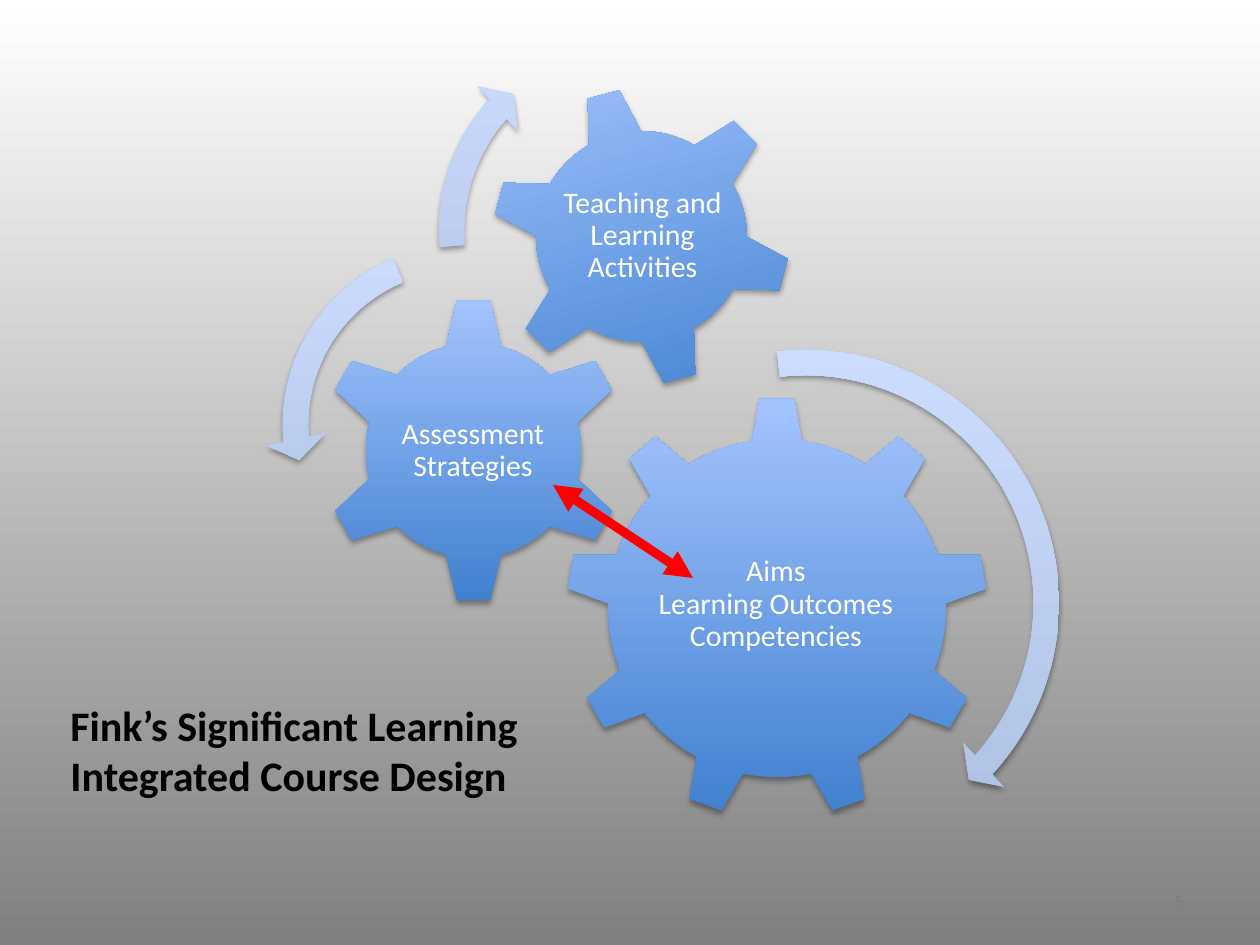
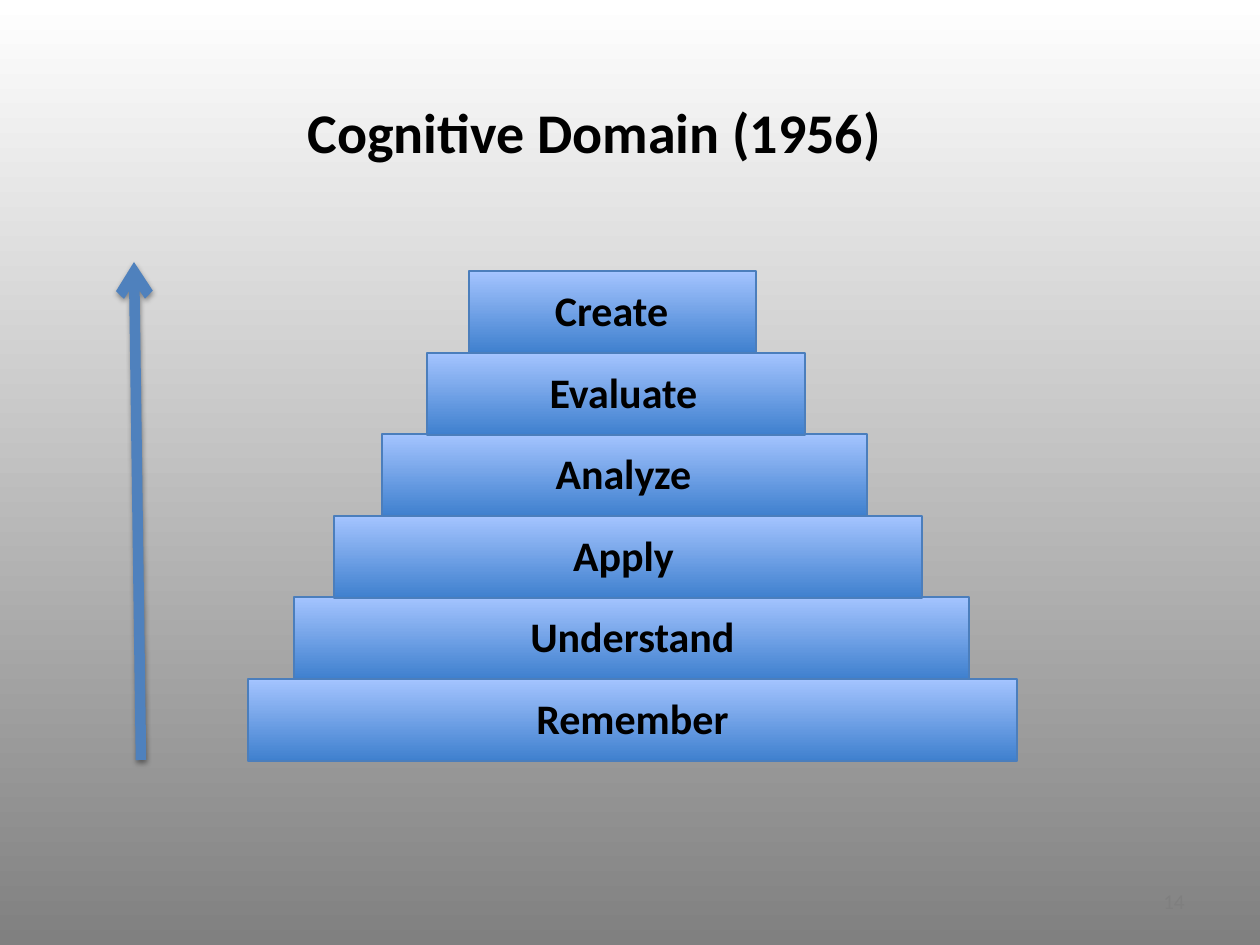
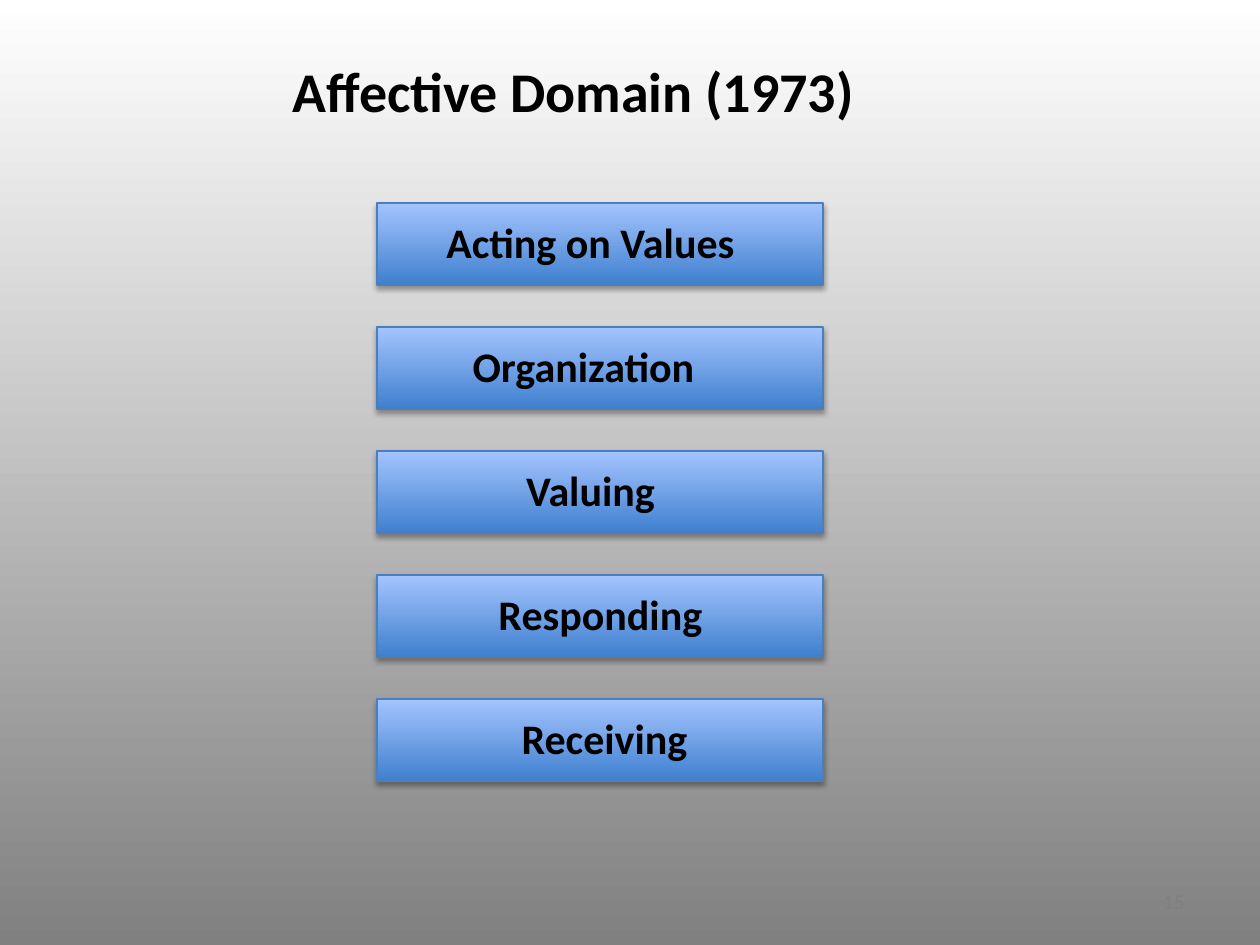
import dataclasses

import pptx
import pptx.dml.color
import pptx.enum.shapes
import pptx.enum.text
import pptx.oxml
import pptx.oxml.ns
import pptx.util
from lxml import etree

SHAPE = pptx.enum.shapes.MSO_SHAPE
ALIGN = pptx.enum.text.PP_ALIGN
ANCHOR = pptx.enum.text.MSO_ANCHOR


@dataclasses.dataclass(frozen=True)
class Theme:
    """Colours, font and type sizes of the deck."""
    font: str = "Calibri"
    black: str = "000000"
    white: str = "FFFFFF"
    red: str = "FF0000"
    blue: str = "4F81BD"
    edge: str = "4B7EBC"
    muted: str = "7F7F7F"
    back: tuple = ("808080", "FFFFFF")
    block: tuple = ("3F80CE", "A4C4FF")
    arc: tuple = ("ADBFE1", "CCDDFF")
    title: int = 32
    label: int = 24
    gear: int = 17
    number: int = 12


THEME = Theme()


def px(count):
    """Turn pixels into EMU."""
    return pptx.util.Emu(round(count * 914400 / 126))


def rgb(code):
    """Turn a hex code into a colour."""
    return pptx.dml.color.RGBColor.from_string(code)


def blend(fill, pair):
    """Fill with a gradient that runs from bottom to top."""
    fill.gradient()
    fill.gradient_angle = 90
    for stop, place, code in zip(fill.gradient_stops, (0, 1), pair):
        stop.position = place
        stop.color.rgb = rgb(code)


def shade(shape, alpha=0):
    """Give a shape a soft shadow below, or none when alpha is zero."""
    props = shape._element.spPr
    tag = pptx.oxml.ns.qn("a:effectLst")
    for old in props.findall(tag):
        props.remove(old)
    effect = etree.SubElement(props, tag)
    if alpha:
        cast = etree.SubElement(effect, pptx.oxml.ns.qn("a:outerShdw"), blurRad="40000",
                                dist="23000", dir="5400000", rotWithShape="0")
        tint = etree.SubElement(cast, pptx.oxml.ns.qn("a:srgbClr"), val=THEME.black)
        etree.SubElement(tint, pptx.oxml.ns.qn("a:alpha"), val=str(alpha * 1000))


def style(frame, size, color, bold=False, align=ALIGN.LEFT):
    """Format all text in a frame."""
    frame.word_wrap = True
    for para in frame.paragraphs:
        para.alignment = align
        for run in para.runs:
            run.font.name = THEME.font
            run.font.size = pptx.util.Pt(size)
            run.font.bold = bold
            run.font.color.rgb = rgb(color)


def add_text(slide, text, box, size, color, bold=False, align=ALIGN.LEFT):
    """Add a text box and return its frame."""
    frame = slide.shapes.add_textbox(*map(px, box)).text_frame
    frame.text = text
    style(frame, size, color, bold, align)
    return frame


def add_block(slide, kind, box, pair, alpha=0, edge=None):
    """Add a preset shape with a gradient fill."""
    shape = slide.shapes.add_shape(kind, *map(px, box))
    blend(shape.fill, pair)
    if edge:
        shape.line.color.rgb = rgb(edge)
        shape.line.width = pptx.util.Pt(0.75)
    else:
        shape.line.fill.background()
    shade(shape, alpha)
    return shape


def add_gear(slide, kind, left, top, size, turn, text, box):
    """Add a gear and its caption."""
    gear = add_block(slide, kind, (left, top, size, size), THEME.block, 35)
    gear.rotation = turn
    frame = add_text(slide, text, box, THEME.gear, THEME.white, align=ALIGN.CENTER)
    frame.vertical_anchor = ANCHOR.MIDDLE
    frame.margin_left = frame.margin_right = px(2)
    frame.margin_top = frame.margin_bottom = px(2)
    for para in frame.paragraphs:
        para.line_spacing = 0.9


def add_arc(slide, kind, left, top, size, tip, end, start):
    """Add a curved arrow; its angles are in degrees."""
    arc = add_block(slide, kind, (left, top, size, size), THEME.arc, 35)
    values = (25.4 / size, tip * 0.6, end * 0.6, start * 0.6, 29.6 / size)
    for spot, value in enumerate(values):
        arc.adjustments[spot] = value


def add_arrow(slide, ends, color, width, alpha=0, head="none", tail="none"):
    """Add a straight line with arrowheads."""
    line = slide.shapes.add_connector(
        pptx.enum.shapes.MSO_CONNECTOR.STRAIGHT, *map(px, ends))
    line.line.color.rgb = rgb(color)
    line.line.width = pptx.util.Pt(width)
    stroke = line.line._get_or_add_ln()
    for tag, kind in (("a:headEnd", head), ("a:tailEnd", tail)):
        etree.SubElement(stroke, pptx.oxml.ns.qn(tag), type=kind)
    shade(line, alpha)


def add_step(slide, text, left, top, width, start, alpha=0):
    """Add a bar and the label that lies on it."""
    add_block(slide, SHAPE.RECTANGLE, (left, top, width, 82), THEME.block, alpha, THEME.edge)
    add_text(slide, text, (start, top + 7, 393, 63), THEME.label, THEME.black, True,
             ALIGN.CENTER)


def add_slide(deck, number, layout):
    """Add a slide with its number."""
    slide = deck.slides.add_slide(deck.slide_layouts.get_by_name(layout))
    frame = add_text(slide, number, (903, 876, 294, 50), THEME.number, THEME.muted,
                     align=ALIGN.RIGHT)
    frame.vertical_anchor = ANCHOR.MIDDLE
    return slide


def set_title(slide, text, left, top, align):
    """Place and format the title."""
    title = slide.shapes.title
    title.left, title.top, title.width, title.height = map(px, (left, top, 1071, 203))
    title.text_frame.text = text
    title.text_frame.vertical_anchor = ANCHOR.MIDDLE
    style(title.text_frame, THEME.title, THEME.black, True, align)


def draw_gears(deck):
    """Build the course design slide."""
    slide = add_slide(deck, "5", "Blank")
    add_gear(slide, SHAPE.GEAR_9, 566, 397, 422, 0,
             "Aims\vLearning Outcomes\vCompetencies", (650, 496, 252, 217))
    add_gear(slide, SHAPE.GEAR_6, 320, 297, 307, 0,
             "Assessment Strategies", (397, 375, 152, 151))
    add_gear(slide, SHAPE.GEAR_6, 491, 86, 301, 345,
             "Teaching and Learning Activities", (558, 151, 169, 169))
    add_arc(slide, SHAPE.CIRCULAR_ARROW, 536, 333, 540, 4.98, 42.36, 263.46)
    add_arc(slide, SHAPE.LEFT_CIRCULAR_ARROW, 266, 228, 393, 7.17, 174.82, 247.3)
    add_arc(slide, SHAPE.CIRCULAR_ARROW, 422, 19, 423, 6.57, 221.9, 175.14)
    add_text(slide, "Fink’s Significant Learning\nIntegrated Course Design",
             (58, 693, 509, 115), THEME.label, THEME.black, True)
    add_arrow(slide, (553, 485, 693, 578), THEME.red, 5.25, head="triangle", tail="triangle")


def draw_steps(deck):
    """Build the cognitive domain slide."""
    slide = add_slide(deck, "14", "Title Only")
    set_title(slide, "Cognitive Domain (1956)", 295, 30, ALIGN.LEFT)
    steps = [("Create", 469, 287, 415), ("Evaluate", 427, 378, 427),
             ("Analyze", 382, 485, 427), ("Apply", 334, 588, 427),
             ("Understand", 294, 675, 436), ("Remember", 248, 769, 436)]
    for row, (text, left, width, start) in reversed(list(enumerate(steps))):
        add_step(slide, text, left, round(271 + row * 81.6), width, start)
    add_arrow(slide, (141, 760, 134, 262), THEME.blue, 6, 38, tail="arrow")


def draw_bars(deck):
    """Build the affective domain slide."""
    slide = add_slide(deck, "15", "Title Only")
    set_title(slide, "Affective Domain (1973)", 38, -11, ALIGN.CENTER)
    bars = [("Acting on Values", 394), ("Organization", 387), ("Valuing", 394),
            ("Responding", 404), ("Receiving", 408)]
    for row, (text, start) in enumerate(bars):
        add_step(slide, text, 377, 203 + row * 124, 446, start, 35)


def main():
    """Build and save the deck."""
    deck = pptx.Presentation()
    deck.slide_width, deck.slide_height = px(1260), px(945)
    blend(deck.slide_master.background.fill, THEME.back)
    draw_gears(deck)
    draw_steps(deck)
    draw_bars(deck)
    deck.save("out.pptx")


if __name__ == "__main__":
    main()
